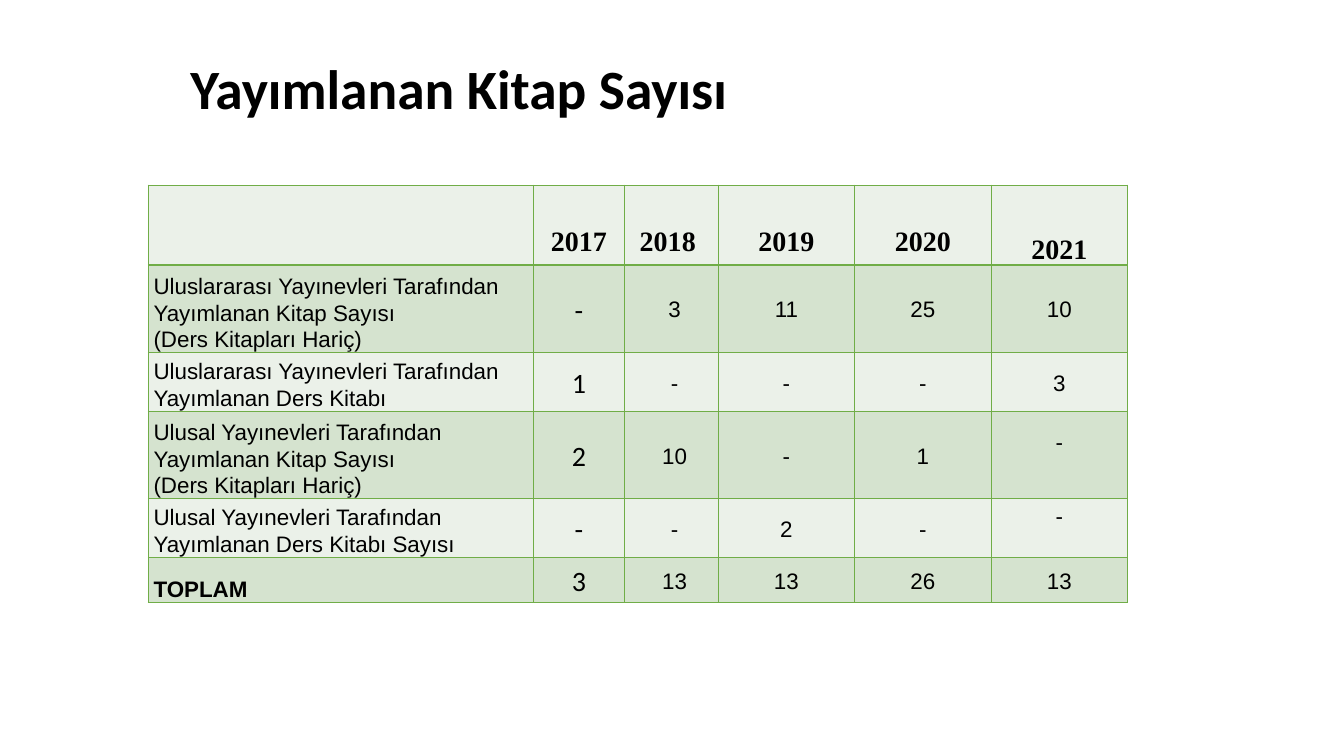
import pptx
import pptx.dml.color
import pptx.enum.text
import pptx.oxml
import pptx.oxml.ns
import pptx.util

Cm, Pt = pptx.util.Cm, pptx.util.Pt
RGBColor = pptx.dml.color.RGBColor
ANCHOR = pptx.enum.text.MSO_ANCHOR
ALIGN = pptx.enum.text.PP_ALIGN

BLACK = RGBColor(0x00, 0x00, 0x00)
GREEN = RGBColor(0x70, 0xAD, 0x47)
PALE = RGBColor(0xEB, 0xF1, 0xE9)
LIGHT = RGBColor(0xD5, 0xE3, 0xCF)

COLUMN_WIDTHS = [9.7, 2.3, 2.36, 3.44, 3.44, 3.44]
ROW_HEIGHTS = [2.01, 2.04, 1.37, 2.04, 1.37, 1.14]
BOOKS = [
    ["", "2017", "2018", "2019", "2020", "2021"],
    ["Uluslararası Yayınevleri Tarafından Yayımlanan Kitap Sayısı\n(Ders Kitapları Hariç)",
     "-", "3", "11", "25", "10"],
    ["Uluslararası Yayınevleri Tarafından Yayımlanan Ders Kitabı", "1", "-", "-", "-", "3"],
    ["Ulusal Yayınevleri Tarafından Yayımlanan Kitap Sayısı\n(Ders Kitapları Hariç)",
     "2", "10", "-", "1", "-"],
    ["Ulusal Yayınevleri Tarafından Yayımlanan Ders Kitabı Sayısı", "-", "-", "2", "-", "-"],
    ["TOPLAM", "3", "13", "13", "26", "13"],
]
LABEL, YEAR_2017, YEAR_2018, YEAR_2021 = 0, 1, 2, 5
HEADER, TOTAL = 0, len(BOOKS) - 1
RAISED = [(3, YEAR_2021), (4, YEAR_2021)]


class BookSlide:
    def __init__(self, deck):
        self.page = deck.slides.add_slide(deck.slide_layouts[6])

    def set_text(self, frame, text, font, size, bold, align, spacing):
        frame.text = text
        for para in frame.paragraphs:
            para.alignment = align
            para.line_spacing = spacing
            for span in para.runs:
                span.font.name = font
                span.font.size = Pt(size)
                span.font.bold = bold
                span.font.color.rgb = BLACK

    def title(self, text):
        box = self.page.shapes.add_textbox(Cm(2.34), Cm(1.5), Cm(29.21), Cm(1.6))
        frame = box.text_frame
        frame.word_wrap = True
        frame.vertical_anchor = ANCHOR.MIDDLE
        frame.margin_left = Cm(2.46)
        frame.margin_top = frame.margin_bottom = 0
        self.set_text(frame, text, "Calibri", 39.6, True, ALIGN.LEFT, 0.9)

    def borders(self, cell):
        properties = cell._tc.get_or_add_tcPr()
        for side in ("lnL", "lnR", "lnT", "lnB"):
            properties.append(pptx.oxml.parse_xml(
                f'<a:{side} {pptx.oxml.ns.nsdecls("a")} w="{Pt(1)}">'
                f'<a:solidFill><a:srgbClr val="{GREEN}"/></a:solidFill></a:{side}>'))

    def cell(self, cell, text, row, column):
        self.borders(cell)
        cell.fill.solid()
        cell.fill.fore_color.rgb = LIGHT if row % 2 else PALE
        cell.margin_left = cell.margin_right = Cm(0 if column == YEAR_2018 else 0.13)
        cell.margin_top = Cm(0.03)
        cell.margin_bottom = 0
        at_bottom = row == HEADER or column == LABEL
        cell.vertical_anchor = ANCHOR.BOTTOM if at_bottom else ANCHOR.MIDDLE
        if row == HEADER:
            font, size = "Times New Roman", 20
            if column != YEAR_2021:
                cell.margin_bottom = Cm(0.18)
        else:
            font, size = ("Calibri", 20) if column == YEAR_2017 else ("Arial", 16)
        if column == YEAR_2018:
            if row == HEADER:
                cell.margin_right = Cm(0.18)
            else:
                cell.margin_left = Cm(0.16)
        if (row, column) in RAISED:
            cell.margin_bottom = Cm(0.66)
        bold = row == HEADER or (row == TOTAL and column == LABEL)
        align = ALIGN.LEFT if column == LABEL else ALIGN.CENTER
        self.set_text(cell.text_frame, text, font, size, bold, align, 1.07)

    def table(self, rows):
        table = self.page.shapes.add_table(
            len(rows), len(COLUMN_WIDTHS), Cm(3.74), Cm(4.67),
            Cm(sum(COLUMN_WIDTHS)), Cm(sum(ROW_HEIGHTS))).table
        table.first_row = table.horz_banding = False
        for column, width in zip(table.columns, COLUMN_WIDTHS):
            column.width = Cm(width)
        for row, height in zip(table.rows, ROW_HEIGHTS):
            row.height = Cm(height)
        for row, texts in enumerate(rows):
            for column, text in enumerate(texts):
                self.cell(table.cell(row, column), text, row, column)


def main():
    deck = pptx.Presentation()
    deck.slide_width, deck.slide_height = Cm(33.87), Cm(19.05)
    slide = BookSlide(deck)
    slide.title("Yayımlanan Kitap Sayısı")
    slide.table(BOOKS)
    deck.save("out.pptx")


if __name__ == "__main__":
    main()
